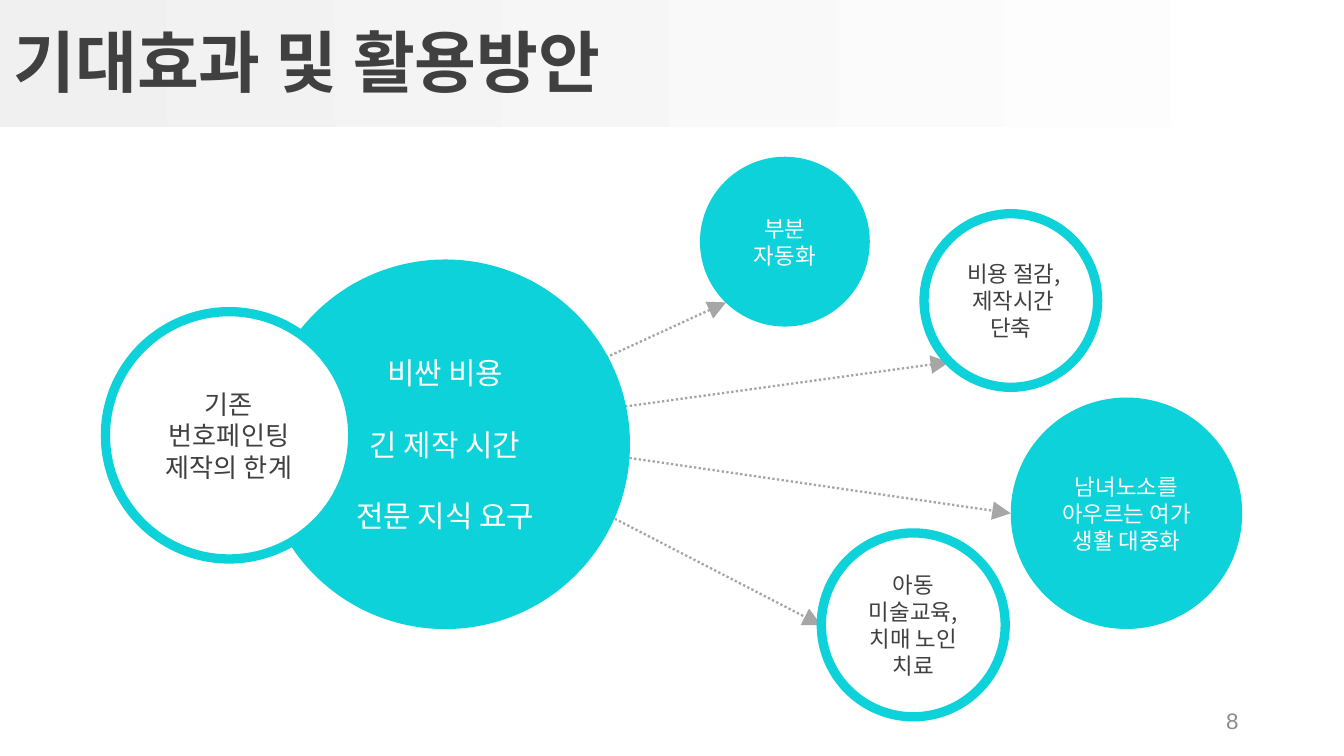
import pptx
import pptx.util
import pptx.dml.color
import pptx.enum.dml
import pptx.enum.shapes
import pptx.enum.text
import pptx.oxml
import pptx.oxml.ns
import lxml.etree

Pt = pptx.util.Pt
RGB = pptx.dml.color.RGBColor.from_string
ALIGN = pptx.enum.text.PP_ALIGN
MIDDLE = pptx.enum.text.MSO_ANCHOR.MIDDLE
SHAPES = pptx.enum.shapes.MSO_SHAPE
KOREAN = "Noto Sans CJK KR"
COLORS = {
    "teal": "0DD2D9",
    "white": "FFFFFF",
    "text": "404040",
    "arrow": "A6A6A6",
    "number": "8C8C8C",
    "band": "F0F0F0",
}


def write_text(shape, lines, size, color, align, font=KOREAN, bold=False):
    frame = shape.text_frame
    frame.text = "\n".join(lines)
    frame.word_wrap = True
    frame.vertical_anchor = MIDDLE
    for paragraph in frame.paragraphs:
        paragraph.alignment = align
        for run in paragraph.runs:
            run.font.name = font
            run.font.size = Pt(size)
            run.font.bold = bold
            run.font.color.rgb = RGB(COLORS[color])
            east_asian = lxml.etree.SubElement(run.font._element, pptx.oxml.ns.qn("a:ea"))
            east_asian.set("typeface", font)


presentation = pptx.Presentation()
presentation.slide_width = Pt(720)
presentation.slide_height = Pt(405)
slide = presentation.slides.add_slide(presentation.slide_layouts[5])

band = slide.shapes.add_shape(SHAPES.RECTANGLE, 0, 0, Pt(717), Pt(68))
band.shadow.inherit = False
band.line.fill.background()
band.fill.gradient()
band.fill.gradient_angle = 0
for stop, position, color in zip(band.fill.gradient_stops, (0, 1), ("band", "white")):
    stop.position = position
    stop.color.rgb = RGB(COLORS[color])
slide.shapes._spTree.insert(2, band._element)

title = slide.shapes.title
title.left, title.top, title.width, title.height = Pt(0), Pt(2), Pt(720), Pt(61)
write_text(title, ["기대효과 및 활용방안"], 36, "text", ALIGN.LEFT, bold=True)

arrow_start = (238.5, 231)
arrow_ends = [(389, 162), (508.5, 194), (541.5, 275), (440, 335)]
for end in arrow_ends:
    arrow = slide.shapes.add_connector(
        pptx.enum.shapes.MSO_CONNECTOR.STRAIGHT, *map(Pt, arrow_start + end))
    arrow.line.color.rgb = RGB(COLORS["arrow"])
    arrow.line.width = Pt(1.25)
    arrow.line.dash_style = pptx.enum.dml.MSO_LINE.ROUND_DOT
    line = arrow.line._get_or_add_ln()
    tail = lxml.etree.SubElement(line, pptx.oxml.ns.qn("a:tailEnd"))
    for name, value in (("type", "triangle"), ("w", "lg"), ("len", "lg")):
        tail.set(name, value)
    lxml.etree.SubElement(arrow._element.spPr, pptx.oxml.ns.qn("a:effectLst"))

circles = [
    (139.5, 139, 198, True, 16, 7.2, ["비싼 비용", "긴 제작 시간", "전문 지식 요구"]),
    (56.5, 167, 132.5, False, 14, 7.2, ["기존", "번호페인팅 제작의 한계"]),
    (375, 84, 91, True, 12, 7.2, ["부분", "자동화"]),
    (495, 114.5, 93, False, 12, 8.5, ["비용 절감, 제작시간 단축"]),
    (440, 285.5, 98.5, False, 12, 7.2, ["아동 미술교육,", "치매 노인 치료"]),
    (541.5, 213, 124, True, 12, 7.2, ["남녀노소를 아우르는 여가 생활 대중화"]),
]
for left, top, diameter, filled, size, inset, lines in circles:
    circle = slide.shapes.add_shape(
        SHAPES.OVAL, Pt(left), Pt(top), Pt(diameter), Pt(diameter))
    circle.shadow.inherit = False
    circle.fill.solid()
    circle.fill.fore_color.rgb = RGB(COLORS["teal" if filled else "white"])
    if filled:
        circle.line.fill.background()
    else:
        circle.line.color.rgb = RGB(COLORS["teal"])
        circle.line.width = Pt(5)
    write_text(circle, lines, size, "white" if filled else "text", ALIGN.CENTER)
    circle.text_frame.margin_left = circle.text_frame.margin_right = Pt(inset)
    for paragraph in circle.text_frame.paragraphs:
        paragraph.line_spacing = Pt(size * 1.2)
    if size == 16:
        for paragraph in circle.text_frame.paragraphs[1:]:
            paragraph.space_before = Pt(19.2)

page_number = slide.shapes.add_textbox(Pt(508.5), Pt(375), Pt(162), Pt(21.5))
write_text(page_number, ["8"], 12, "number", ALIGN.RIGHT, font="Arial")

presentation.save("out.pptx")
